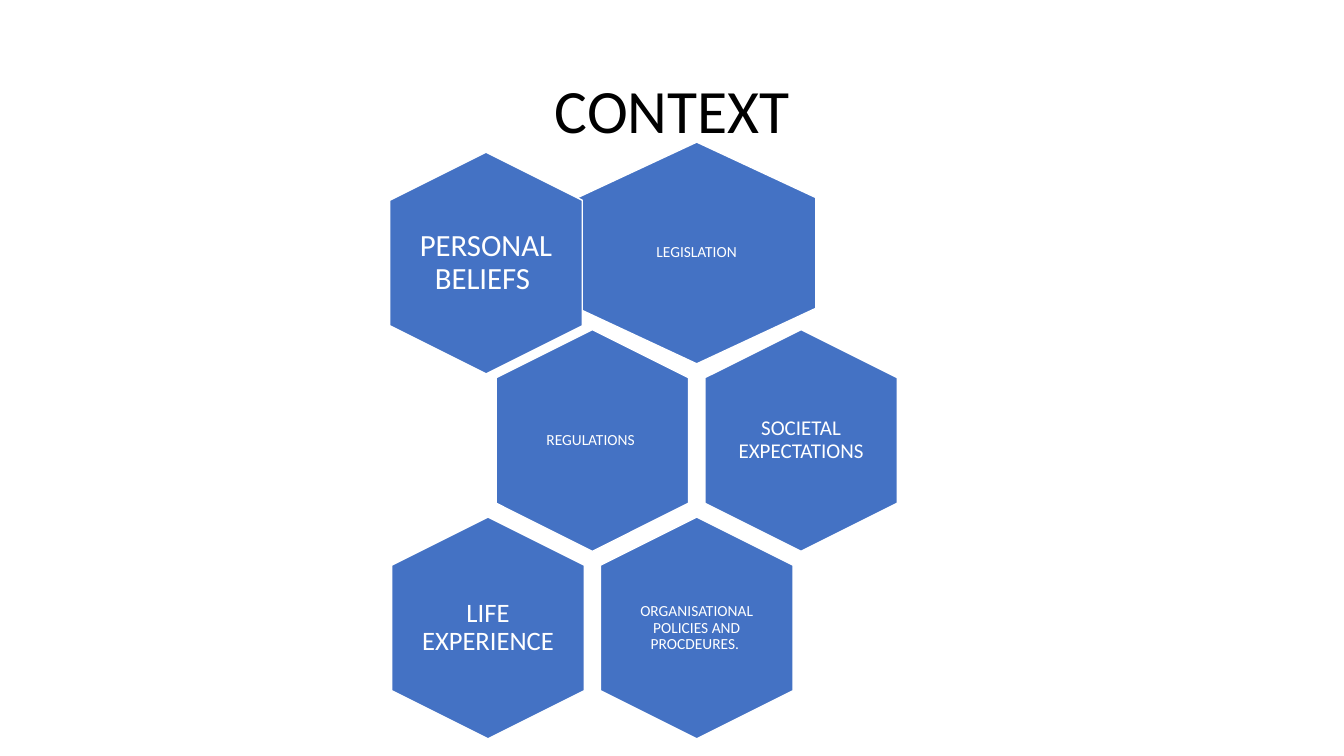
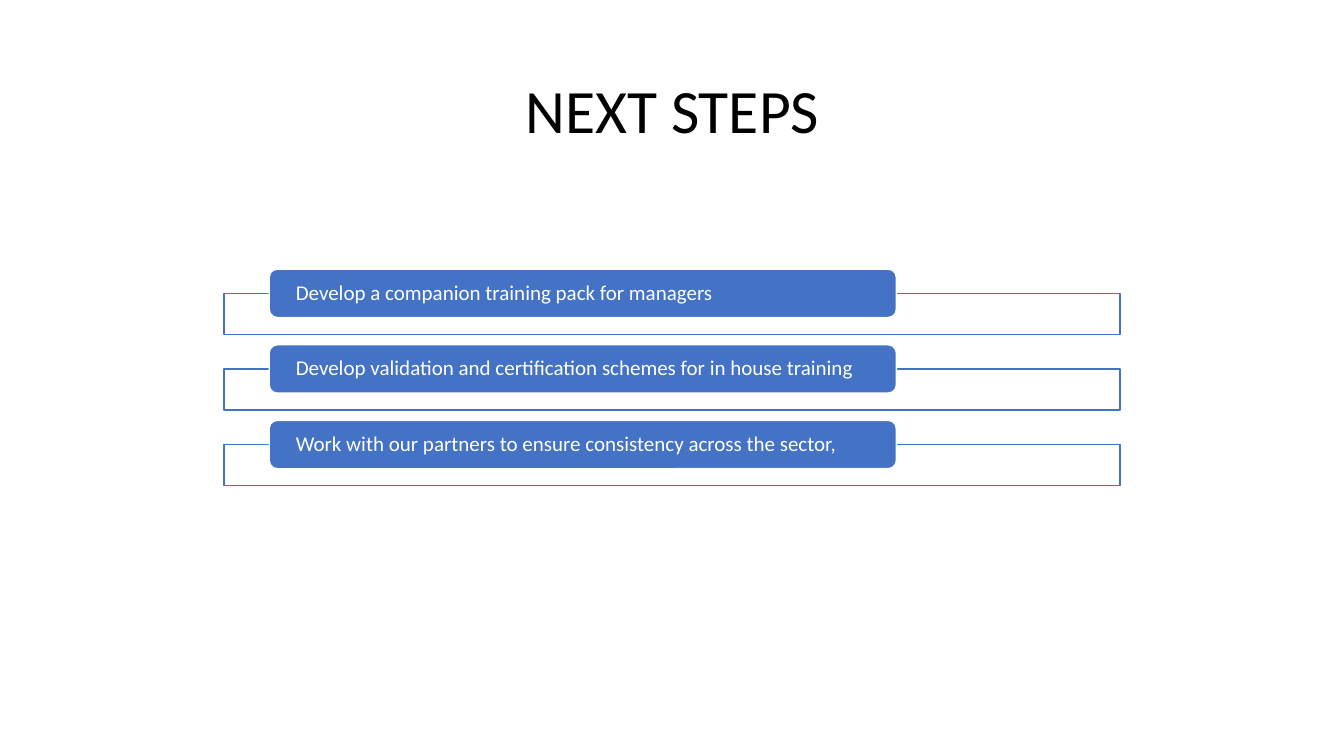
from lxml import etree
from pptx import Presentation
from pptx.dml.color import RGBColor
from pptx.enum.shapes import MSO_SHAPE as Shape
from pptx.enum.text import MSO_ANCHOR as Anchor, PP_ALIGN as Align
from pptx.oxml.ns import qn
from pptx.util import Emu, Pt

PX = 9144  # 100 px to the inch
FONT = "Calibri"
BLUE, WHITE, BLACK = "4472C4", "FFFFFF", "000000"

# Honeycomb: column pitch, row pitch and cell sizes
COLUMN_STEP, ROW_STEP = 207, 186
CELL_LENGTH, CELL_WIDTH = 220, 191
LABEL_SIZE = (132, 151)

# Label, column, row, text size, inset, and any departures from the grid
CELLS = [
    ("LEGISLATION", 1, 0, 11, 5, {"width": 236, "label_size": (157, 146)}),
    ("PERSONAL BELIEFS ", 0, 0, 22, 0, {"shift": (-2, 10)}),
    ("REGULATIONS ", 0.5, 1, 11, 5, {}),
    ("SOCIETAL EXPECTATIONS", 1.5, 1, 15, 0, {}),
    ("ORGANISATIONAL POLICIES AND PROCDEURES. ", 1, 2, 11, 5, {}),
    ("LIFE EXPERIENCE", 0, 2, 19, 0, {}),
]

STEP_PITCH = 75
STEPS = [
    "Develop a companion training pack for managers",
    "Develop validation and certification schemes for in house training",
    "Work with our partners to ensure consistency across the sector,",
]


def px(*lengths):
    return [Emu(round(length * PX)) for length in lengths]


def color(code):
    return RGBColor.from_string(code)


def write(box, text, size, ink=WHITE, align=Align.CENTER, insets=(5, 5)):
    """Fill a shape or text box with one formatted paragraph."""
    side, end = px(*insets)
    frame = box.text_frame
    frame_format = {
        "word_wrap": True, "vertical_anchor": Anchor.MIDDLE,
        "margin_left": side, "margin_right": side,
        "margin_top": end, "margin_bottom": end,
    }
    for name, value in frame_format.items():
        setattr(frame, name, value)
    para = frame.paragraphs[0]
    para.alignment, para.line_spacing = align, 0.9
    span = para.add_run()
    span.text = text
    for name, value in {"name": FONT, "size": Pt(size)}.items():
        setattr(span.font, name, value)
    span.font.color.rgb = color(ink)


def add_label(page, area, text, size, **style):
    write(page.shapes.add_textbox(*px(*area)), text, size, **style)


def add_block(page, kind, area, fill=BLUE, line=WHITE, opacity=100):
    block = page.shapes.add_shape(kind, *px(*area))
    block.shadow.inherit = False
    block.fill.solid()
    block.fill.fore_color.rgb = color(fill)
    block.line.color.rgb = color(line)
    block.line.width = Pt(1)
    if opacity < 100:
        tint = block.fill._xPr.find(qn("a:solidFill"))[0]
        etree.SubElement(tint, qn("a:alpha")).set("val", str(opacity * 1000))
    return block


def centred(x, y, width, height):
    return x - width / 2, y - height / 2, width, height


def add_cell(page, text, column, row, size, inset,
             width=CELL_WIDTH, label_size=LABEL_SIZE, shift=(0, 0)):
    """Upright hexagon with its label on the same centre."""
    x = 484 + column * COLUMN_STEP + shift[0]
    y = 251 + row * ROW_STEP + shift[1]
    hexagon = add_block(page, Shape.HEXAGON, centred(x, y, CELL_LENGTH, width))
    hexagon.rotation = 90
    hexagon.adjustments[0] = 0.25
    add_label(page, centred(x, y, *label_size), text, size,
              insets=(inset, inset))


def add_step(page, index, text):
    """Outlined bar with a rounded tab across its upper edge."""
    top = 267 + index * STEP_PITCH
    add_block(page, Shape.RECTANGLE, (222, top + 24, 889, 41),
              fill=WHITE, line=BLUE, opacity=90)
    tab = add_block(page, Shape.ROUNDED_RECTANGLE, (267, top, 622, 48))
    write(tab, text, 15, align=Align.LEFT, insets=(24, 0))


def add_page(deck, title):
    page = deck.slides.add_slide(deck.slide_layouts[6])
    add_label(page, (92, 40, 1150, 145), title, 44, ink=BLACK, insets=(10, 5))
    return page


def main():
    deck = Presentation()
    deck.slide_width, deck.slide_height = px(1333, 750)

    # Context honeycomb
    context = add_page(deck, "CONTEXT")
    for text, column, row, size, inset, changes in CELLS:
        add_cell(context, text, column, row, size, inset, **changes)

    # Next steps list
    next_steps = add_page(deck, "NEXT STEPS")
    for index, text in enumerate(STEPS):
        add_step(next_steps, index, text)

    deck.save("out.pptx")


if __name__ == "__main__":
    main()
